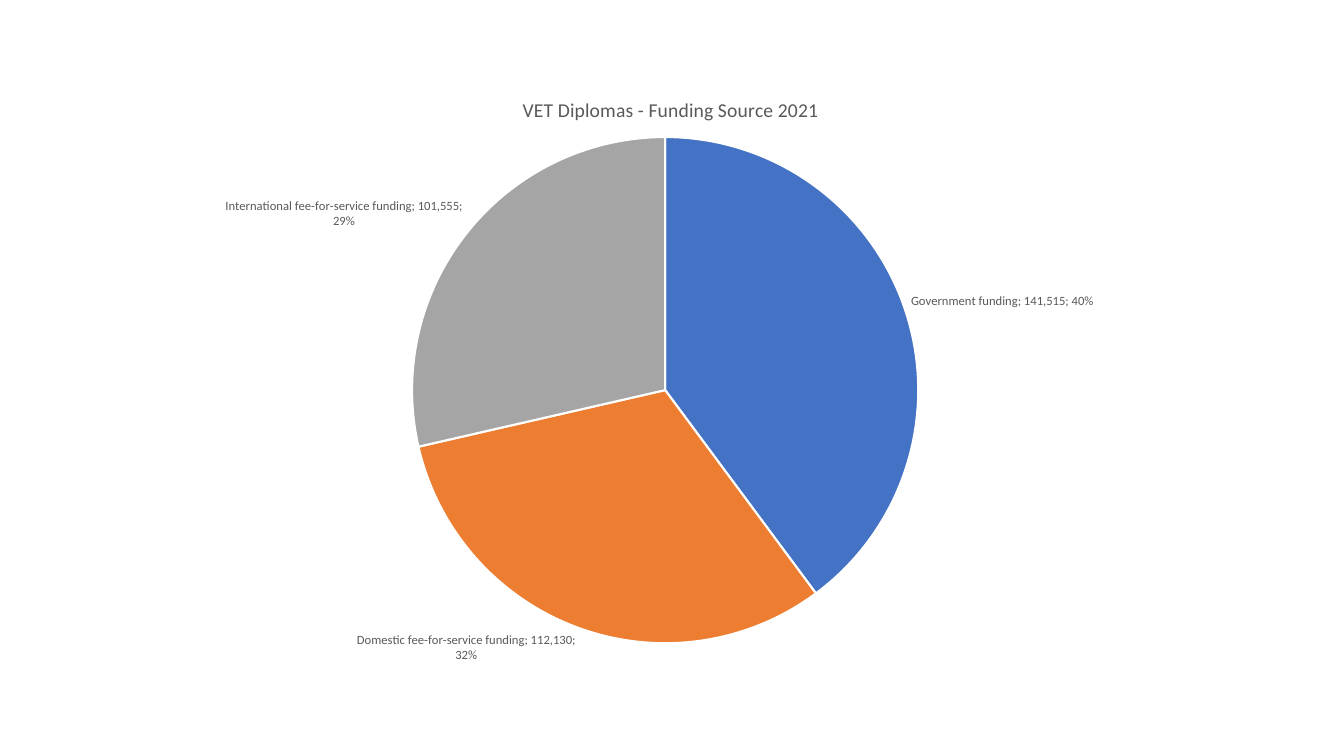
from dataclasses import dataclass

from lxml.etree import SubElement
from pptx import Presentation
from pptx.chart.data import CategoryChartData
from pptx.dml.color import RGBColor
from pptx.enum.chart import XL_CHART_TYPE, XL_LABEL_POSITION
from pptx.oxml import parse_xml
from pptx.oxml.ns import nsdecls, qn
from pptx.util import Cm, Pt


@dataclass(frozen=True)
class Theme:
    font: str = "Calibri"
    text: str = "595959"
    border: str = "FFFFFF"
    slices: tuple = ("4472C4", "ED7D31", "A5A5A5")
    title_size: float = 14
    label_size: float = 9
    border_width: float = 1.5


THEME = Theme()
BLANK_LAYOUT = 6
FUNDING = {
    "Government funding": 141515,
    "Domestic fee-for-service funding": 112130,
    "International fee-for-service funding": 101555,
}
# Shares of the chart box
EDGES = {"xMode": "edge", "yMode": "edge"}
PIE_AREA = {"layoutTarget": "inner", **EDGES, "x": 0.284, "y": 0.108, "w": 0.421, "h": 0.825}
TITLE_AREA = {**EDGES, "x": 0.373, "y": 0.036}
LABEL_FORMAT = {
    "show_category_name": True,
    "show_value": True,
    "show_percentage": True,
    "show_legend_key": False,
    "position": XL_LABEL_POSITION.OUTSIDE_END,
}


def format_font(font, size):
    values = {"name": THEME.font, "size": Pt(size), "bold": False}
    for name, value in values.items():
        setattr(font, name, value)
    font.color.rgb = RGBColor.from_string(THEME.text)


def set_layout(parent, position, settings):
    """Give a chart part a manual layout as the child at the given position."""
    for old_layout in parent.findall(qn("c:layout")):
        parent.remove(old_layout)
    layout = parse_xml(f"<c:layout {nsdecls('c')}><c:manualLayout/></c:layout>")
    for name, value in settings.items():
        SubElement(layout[0], qn(f"c:{name}")).set("val", str(value))
    parent.insert(position, layout)


def format_labels(plot):
    plot.has_data_labels = True
    labels = plot.data_labels
    for name, value in LABEL_FORMAT.items():
        setattr(labels, name, value)
    format_font(labels.font, THEME.label_size)
    element = labels._element
    # Without a label format, values follow the data and shares show as percent
    for number_format in element.findall(qn("c:numFmt")):
        element.remove(number_format)
    element.find(f"{qn('c:txPr')}/{qn('a:bodyPr')}").set("wrap", "square")
    separator = parse_xml(f"<c:separator {nsdecls('c')}>; </c:separator>")
    element.find(qn("c:showBubbleSize")).addnext(separator)


def color_slices(series):
    for index, color in enumerate(THEME.slices):
        slice_format = series.points[index].format
        slice_format.fill.solid()
        slice_format.fill.fore_color.rgb = RGBColor.from_string(color)
        slice_format.line.color.rgb = RGBColor.from_string(THEME.border)
        slice_format.line.width = Pt(THEME.border_width)


def add_title(chart):
    chart.has_title = True
    title = chart.chart_title
    run = title.text_frame.paragraphs[0].add_run()
    run.text = "VET Diplomas - Funding Source 2021"
    format_font(run.font, THEME.title_size)
    title.include_in_layout = False
    set_layout(title._element, 1, TITLE_AREA)


def add_funding_pie(slide, left, top, width, height):
    data = CategoryChartData(number_format="#,##0")
    data.categories = list(FUNDING)
    data.add_series("Series 1", list(FUNDING.values()))
    chart = slide.shapes.add_chart(
        XL_CHART_TYPE.PIE, left, top, width, height, data
    ).chart
    format_font(chart.font, THEME.label_size)
    chart.has_legend = False
    add_title(chart)

    plot = chart.plots[0]
    plot.vary_by_categories = True
    color_slices(plot.series[0])
    format_labels(plot)
    set_layout(plot._element.getparent(), 0, PIE_AREA)


def main():
    presentation = Presentation()
    presentation.slide_width, presentation.slide_height = Cm(33.87), Cm(19.05)
    slide = presentation.slides.add_slide(presentation.slide_layouts[BLANK_LAYOUT])
    add_funding_pie(slide, Cm(1.78), Cm(1.78), Cm(30.3), Cm(15.47))
    presentation.save("out.pptx")


if __name__ == "__main__":
    main()
